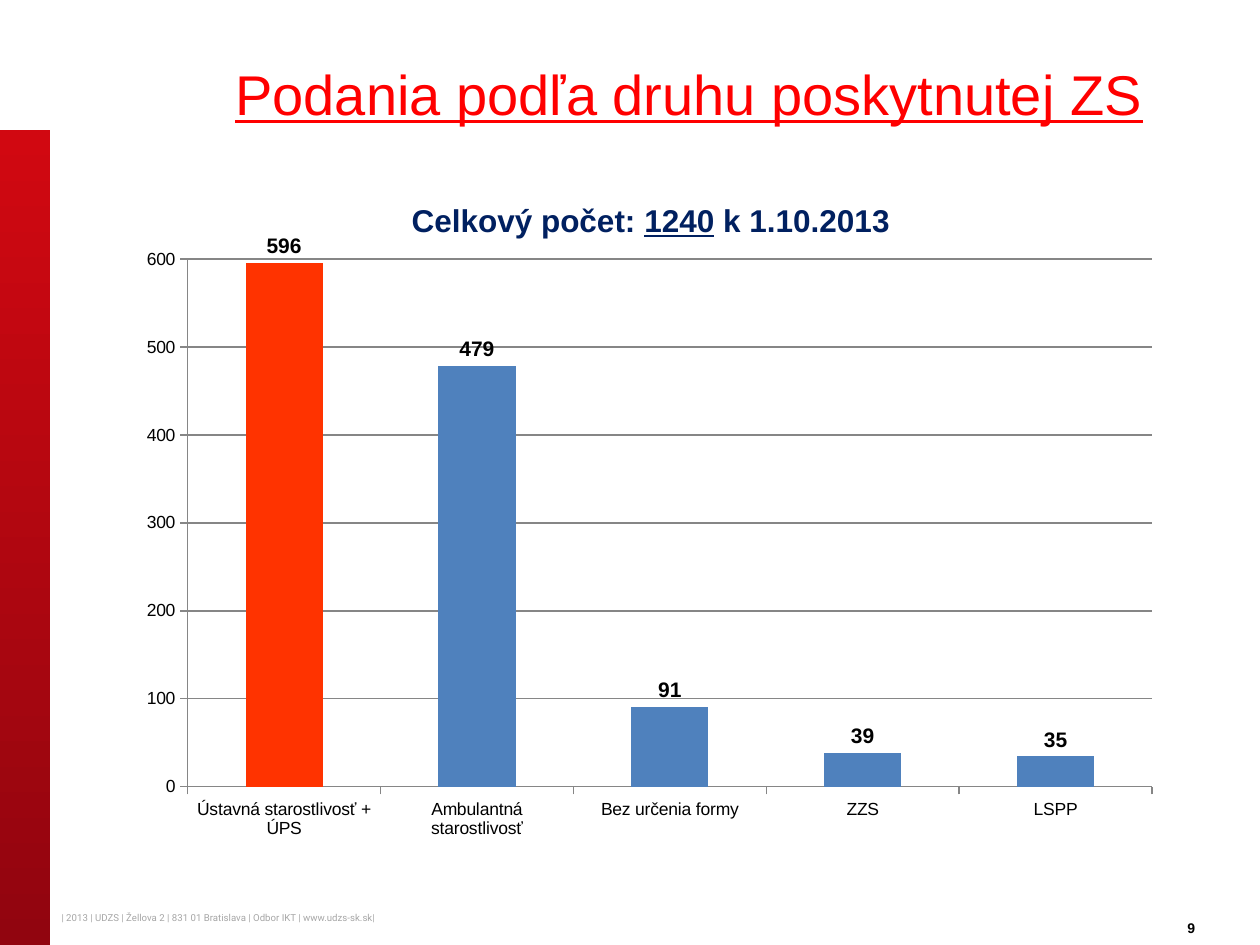
from pptx import Presentation
from pptx.chart.data import CategoryChartData as ChartData
from pptx.dml.color import RGBColor as RGB
from pptx.enum.chart import XL_CHART_TYPE as Kind, XL_LABEL_POSITION as Pos, XL_TICK_MARK as Tick
from pptx.enum.shapes import MSO_SHAPE as Shape
from pptx.enum.text import MSO_ANCHOR as Anchor, PP_ALIGN as Align
from pptx.oxml import parse_xml
from pptx.oxml.ns import nsdecls
from pptx.util import Inches, Pt

# Content
TITLE = "Podania podľa druhu poskytnutej ZS"
FOOTER = "| 2013 | UDZS | Žellova 2 | 831 01 Bratislava | Odbor IKT | www.udzs-sk.sk|"
NUMBER = "9"
HEAD = [("Celkový počet: ", False), ("1240", True), (" k 1.10.2013", False)]
DATA = [
    ("Ústavná starostlivosť + ÚPS", 596),
    ("Ambulantná starostlivosť", 479),
    ("Bez určenia formy", 91),
    ("ZZS", 39),
    ("LSPP", 35),
]

# Colours
RED, ORANGE = RGB(0xFF, 0, 0), RGB(0xFF, 0x33, 0)
DARK, LIGHT = RGB(0x91, 0x05, 0x0F), RGB(0xD1, 0x08, 0x11)
BLUE, NAVY = RGB(0x4F, 0x81, 0xBD), RGB(0, 0x20, 0x60)
BLACK, GRAY, PALE = RGB(0, 0, 0), RGB(0x86, 0x86, 0x86), RGB(0xA6, 0xA6, 0xA6)

# Places: left, top, width, height in inches
WIDE, HIGH = 10, 7.5
BAR = (0, 1.03, 0.4, HIGH - 1.03)
TITLE_AT = (1.77, 0.48, 7.73, 1.07)
CHART_AT = (0.99, 1.35, 8.32, 5.44)
FOOT_AT = (0.39, 7.1, 5.33, 0.38)
NUM_AT = (9.08, 7.14, 0.75, 0.3)

deck = Presentation()
deck.slide_width, deck.slide_height = Inches(WIDE), Inches(HIGH)
slide = deck.slides.add_slide(deck.slide_layouts[6])


def place(box):
    return [Inches(v) for v in box]


def style(font, size, color, name="Arial", bold=False, line=False):
    font.size, font.name = Pt(size), name
    font.bold, font.underline = bold, line
    font.color.rgb = color


def write(text, box, size, color, align=Align.LEFT, anchor=Anchor.TOP,
          space=1.0, low=0.05, **look):
    frame = slide.shapes.add_textbox(*place(box)).text_frame
    frame.word_wrap = True
    frame.vertical_anchor = anchor
    frame.margin_bottom = Inches(low)
    para = frame.paragraphs[0]
    para.alignment, para.line_spacing = align, space
    run = para.add_run()
    run.text = text
    style(run.font, size, color, **look)


def layout(inner=False, **share):
    """Manual chart layout from shares of the chart's size."""
    rows = [("layoutTarget", "inner")] if inner else []
    rows += [("xMode", "edge"), ("yMode", "edge"), *share.items()]
    body = "".join(f'<c:{tag} val="{val}"/>' for tag, val in rows)
    return parse_xml(f'<c:layout {nsdecls("c")}><c:manualLayout>{body}'
                     '</c:manualLayout></c:layout>')


def put(parent, item, after):
    """Set the layout of a chart part, behind its text if it has any."""
    for old in parent.findall(item.tag):
        parent.remove(old)
    parent.insert(after, item)


# Page furniture
write(NUMBER, NUM_AT, 8, BLACK, align=Align.CENTER, anchor=Anchor.BOTTOM,
      low=0.01, bold=True)
write(FOOTER, FOOT_AT, 5.5, PALE, name="Roboto", anchor=Anchor.MIDDLE, space=0.9)
bar = slide.shapes.add_shape(Shape.RECTANGLE, *place(BAR))
bar.shadow.inherit = False
bar.line.fill.background()
bar.fill.gradient()
bar.fill.gradient_angle = 90
for stop, color in zip(bar.fill.gradient_stops, (DARK, LIGHT)):
    stop.color.rgb = color

# Title
write(TITLE, TITLE_AT, 32, RED, space=0.9, line=True)

# Chart
names, vals = zip(*DATA)
data = ChartData()
data.categories = names
data.add_series("Series 1", vals)
chart = slide.shapes.add_chart(Kind.COLUMN_CLUSTERED, *place(CHART_AT), data).chart
chart.has_legend = False
style(chart.font, 10, BLACK)

# Chart title
chart.has_title = True
head = chart.chart_title
para = head.text_frame.paragraphs[0]
for text, line in HEAD:
    run = para.add_run()
    run.text = text
    style(run.font, 18, NAVY, bold=True, line=line)
put(head._element, layout(x=0.27, y=0.04), 1)
area = chart._chartSpace.chart.plotArea
put(area, layout(inner=True, x=0.06, y=0.13, w=0.92, h=0.77), 0)

# Axes
for axis in (chart.category_axis, chart.value_axis):
    axis.major_tick_mark, axis.minor_tick_mark = Tick.OUTSIDE, Tick.NONE
    axis.format.line.color.rgb = GRAY
    style(axis.tick_labels.font, 10, BLACK)
scale = chart.value_axis
scale.minimum_scale, scale.maximum_scale, scale.major_unit = 0, 600, 100
scale.has_major_gridlines = True
scale.major_gridlines.format.line.color.rgb = GRAY

# Columns and their labels
plot = chart.plots[0]
plot.gap_width, plot.vary_by_categories = 150, False
series = plot.series[0]
for fill, color in ((series.format.fill, BLUE), (series.points[0].format.fill, ORANGE)):
    fill.solid()
    fill.fore_color.rgb = color
labels = series.data_labels
labels.show_value, labels.position = True, Pos.OUTSIDE_END
style(labels.font, 12, BLACK, bold=True)

deck.save("out.pptx")
